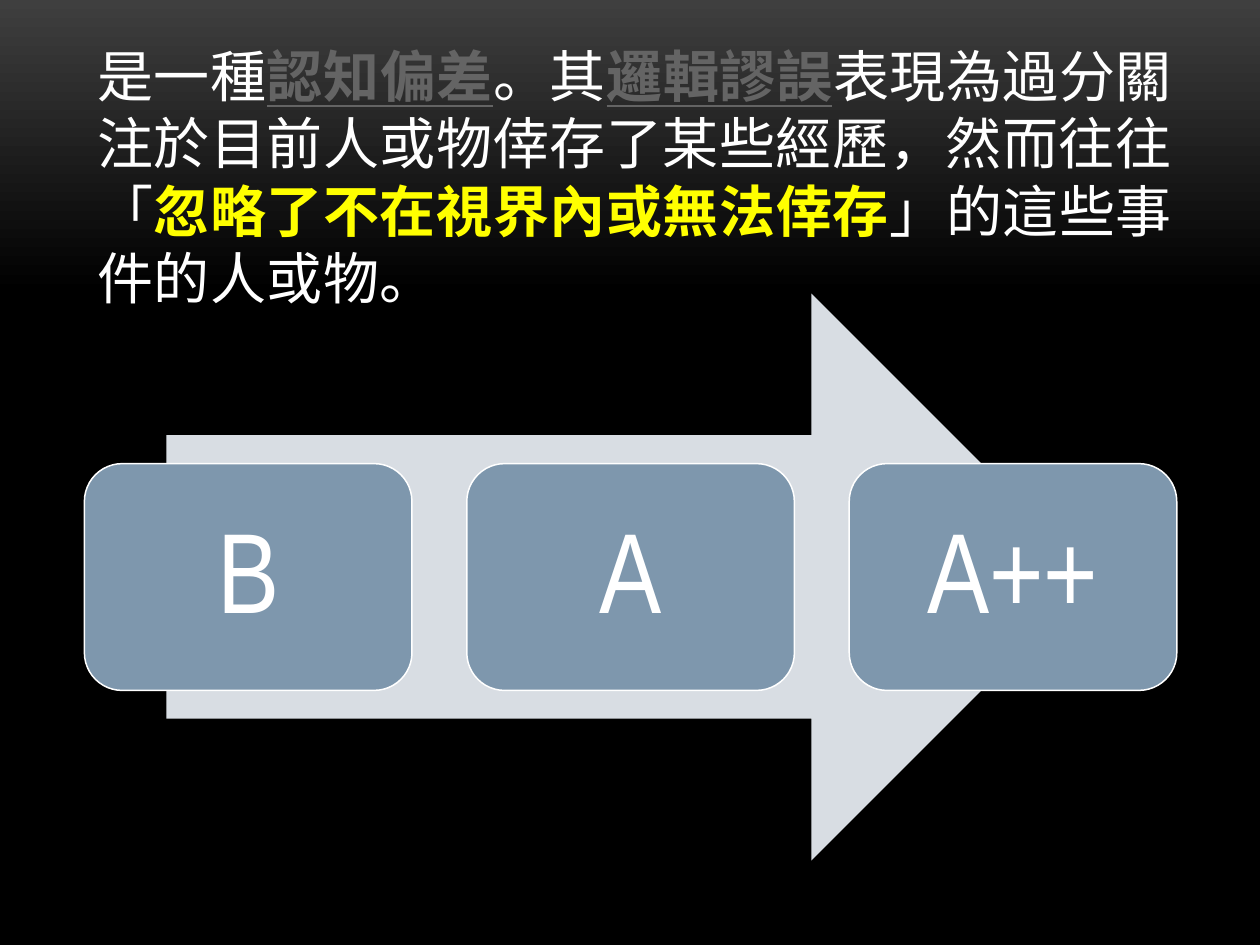
from dataclasses import dataclass

from lxml import etree
from pptx import Presentation
from pptx.dml.color import RGBColor
from pptx.enum.shapes import MSO_SHAPE
from pptx.enum.text import MSO_ANCHOR, MSO_AUTO_SIZE, PP_ALIGN
from pptx.oxml.ns import qn
from pptx.util import Inches, Pt

ARROW, CARD = MSO_SHAPE.RIGHT_ARROW, MSO_SHAPE.ROUNDED_RECTANGLE
MIDDLE, TOP = MSO_ANCHOR.MIDDLE, MSO_ANCHOR.TOP
CENTER, LEFT = PP_ALIGN.CENTER, PP_ALIGN.LEFT
NO_FIT = MSO_AUTO_SIZE.NONE


@dataclass(frozen=True)
class Theme:
    font: str = "Arial Narrow"
    text: RGBColor = RGBColor(0xFF, 0xFF, 0xFF)
    term: RGBColor = RGBColor(0x64, 0x64, 0x64)
    key: RGBColor = RGBColor(0xFF, 0xFF, 0x00)
    arrow: RGBColor = RGBColor(0xD8, 0xDD, 0xE3)
    card: RGBColor = RGBColor(0x7E, 0x97, 0xAD)
    glow: RGBColor = RGBColor(0x3F, 0x3F, 0x3F)
    dark: RGBColor = RGBColor(0x00, 0x00, 0x00)
    body: Pt = Pt(32)
    grade: Pt = Pt(65)
    edge: Pt = Pt(0.85)


THEME = Theme()

# Each run: wording and its style
INTRO = [
    ("是一種", "text"),
    ("認知偏差", "term"),
    ("。其", "text"),
    ("邏輯謬誤", "term"),
    ("表現為過分關注於目前人或物倖存了某些經歷，然而往往「", "text"),
    ("忽略了不在視界內或無法倖存", "key"),
    ("」的這些事件的人或物。", "text"),
]
GRADES = ["B", "A", "A++"]


def set_font(font, size, color):
    font.name, font.size = THEME.font, size
    font.color.rgb = color


def paint_back(slide):
    fill = slide.background.fill
    fill.gradient()
    fill.gradient_angle = 270
    stops = zip(fill.gradient_stops, (0, 0.31), (THEME.glow, THEME.dark))
    for stop, place, color in stops:
        stop.position = place
        stop.color.rgb = color


def add_intro(slide, left, top, width, height):
    body = slide.placeholders[1]
    body.left, body.top, body.width, body.height = left, top, width, height
    frame = body.text_frame
    frame.word_wrap, frame.auto_size = True, NO_FIT
    frame.vertical_anchor = TOP
    para = frame.paragraphs[0]
    para.alignment = LEFT
    para.space_before, para.space_after = Pt(0), Pt(6)
    # Plain paragraph: no bullet, no hanging indent
    props = para._p.get_or_add_pPr()
    props.set("marL", "0")
    props.set("indent", "0")
    etree.SubElement(props, qn("a:buNone"))
    set_font(para.font, THEME.body, THEME.text)
    for words, style in INTRO:
        run = para.add_run()
        run.text = words
        run.font.color.rgb = getattr(THEME, style)
        run.font.bold = style != "text"
        run.font.underline = style == "term"
        run.font._element.set("spc", "30")


def add_block(slide, kind, box, color):
    shape = slide.shapes.add_shape(kind, *box)
    shape.shadow.inherit = False
    shape.fill.solid()
    shape.fill.fore_color.rgb = color
    shape.line.fill.background()
    return shape


def add_card(slide, label, box):
    card = add_block(slide, CARD, box, THEME.card)
    card.line.color.rgb = THEME.text
    card.line.width = THEME.edge
    frame = card.text_frame
    frame.word_wrap = True
    frame.vertical_anchor = MIDDLE
    para = frame.paragraphs[0]
    para.text = label
    para.alignment = CENTER
    para.line_spacing = 0.9
    set_font(para.font, THEME.grade, THEME.text)


def add_flow(slide, left, top, width, height):
    # Arrow spans 85% of the width, centred behind the cards
    span = int(width * 0.85)
    start = left + (width - span) // 2
    add_block(slide, ARROW, (start, top, span, height), THEME.arrow)
    # Equal cards, 40% of the height, with equal gaps
    wide, high = Inches(2.6), int(height * 0.4)
    step = (width - wide) // (len(GRADES) - 1)
    row = top + (height - high) // 2
    for i, label in enumerate(GRADES):
        add_card(slide, label, (left + i * step, row, wide, high))


def main():
    deck = Presentation()
    deck.slide_width, deck.slide_height = Inches(10), Inches(7.5)
    slide = deck.slides.add_slide(deck.slide_layouts[1])
    title = slide.shapes.title._element
    title.getparent().remove(title)
    paint_back(slide)
    add_intro(slide, Inches(0.67), Inches(0.28), Inches(8.83), Inches(2.94))
    add_flow(slide, Inches(0.67), Inches(2.33), Inches(8.67), Inches(4.5))
    deck.save("out.pptx")


if __name__ == "__main__":
    main()
